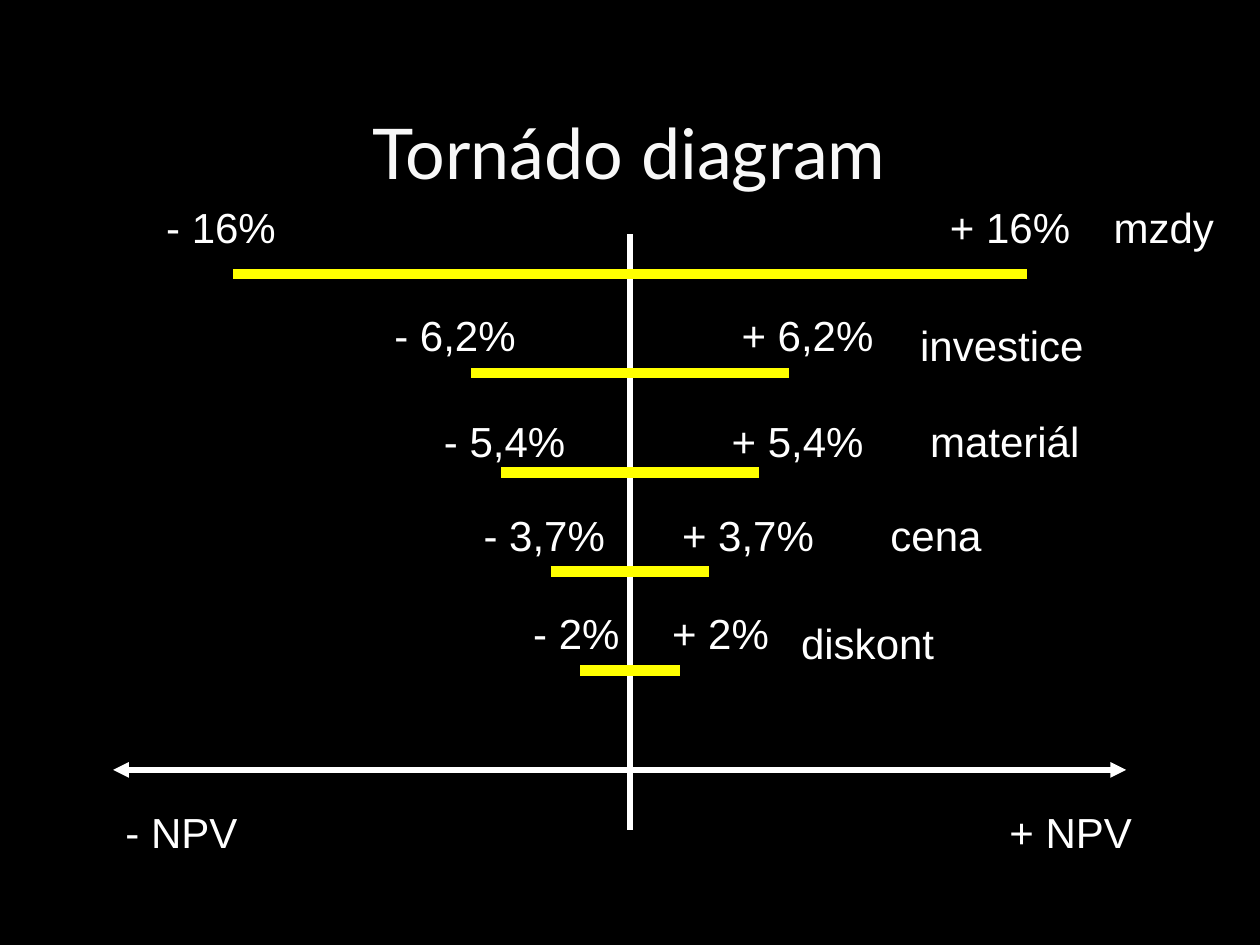
from dataclasses import dataclass

from lxml import etree
from pptx import Presentation
from pptx.dml.color import RGBColor
from pptx.enum.shapes import MSO_CONNECTOR
from pptx.enum.text import MSO_ANCHOR, MSO_AUTO_SIZE, PP_ALIGN
from pptx.oxml.ns import qn
from pptx.util import Inches, Pt

STRAIGHT = MSO_CONNECTOR.STRAIGHT
MIDDLE = MSO_ANCHOR.MIDDLE
GROW = MSO_AUTO_SIZE.SHAPE_TO_FIT_TEXT
CENTER = PP_ALIGN.CENTER


@dataclass(frozen=True)
class Theme:
    background: RGBColor = RGBColor(0x00, 0x00, 0x00)
    title: RGBColor = RGBColor(0xF8, 0xF8, 0xF8)
    text: RGBColor = RGBColor(0xFF, 0xFF, 0xFF)
    bar: RGBColor = RGBColor(0xFF, 0xFF, 0x00)
    title_font: str = "Lato"
    text_font: str = "Arial"
    title_size: Pt = Pt(40)
    text_size: Pt = Pt(24)
    axis_width: Pt = Pt(3)
    bar_width: Pt = Pt(6)


theme = Theme()
presentation = Presentation()
presentation.slide_width = Inches(10)
presentation.slide_height = Inches(7.5)
slide = presentation.slides.add_slide(presentation.slide_layouts[5])
slide.background.fill.solid()
slide.background.fill.fore_color.rgb = theme.background

# Square grid: 127 units across the slide, all positions below are in units
unit = presentation.slide_width / 127
center = 63.5
first_bar, bar_step = 27.6, 10
axis_left, axis_right, axis_y = 11.4, 113.5, 77.6
value_width, name_width, label_height = 16, 27, 6.35


def add_line(start_x, start_y, end_x, end_y, color, width):
    line = slide.shapes.add_connector(
        STRAIGHT, *(round(n * unit) for n in (start_x, start_y, end_x, end_y)))
    line.line.color.rgb = color
    line.line.width = width
    etree.SubElement(line._element.spPr, qn("a:effectLst"))
    return line


def add_label(text, left, top, width):
    box = slide.shapes.add_textbox(
        *(round(n * unit) for n in (left, top, width, label_height)))
    frame = box.text_frame
    frame.word_wrap = True
    frame.auto_size = GROW
    paragraph = frame.paragraphs[0]
    paragraph.text = text
    paragraph.font.name = theme.text_font
    paragraph.font.size = theme.text_size
    paragraph.font.color.rgb = theme.text


title = slide.shapes.title
title.left, title.top, title.width, title.height = (
    round(n * unit) for n in (9.5, 8.5, 107.8, 13.5))
title.text_frame.vertical_anchor = MIDDLE
heading = title.text_frame.paragraphs[0]
heading.text = "Tornádo diagram"
heading.alignment = CENTER
heading.font.name = theme.title_font
heading.font.size = theme.title_size
heading.font.color.rgb = theme.title

add_line(center, 23.6, center, 83.7, theme.text, theme.axis_width)
npv_axis = add_line(axis_left, axis_y, axis_right, axis_y, theme.text, theme.axis_width)
axis_outline = npv_axis.line._get_or_add_ln()
for end in ("a:headEnd", "a:tailEnd"):
    etree.SubElement(axis_outline, qn(end), type="triangle")

# name, change, half bar, minus left, plus left, value top, name left, name top
factors = [
    ("mzdy", "16%", 40, 15.5, 94.5, 19.7, 111, 19.7),
    ("investice", "6,2%", 16, 38.5, 73.5, 30.6, 91.5, 31.6),
    ("materiál", "5,4%", 13, 43.5, 72.5, 41.3, 92.5, 41.3),
    ("cena", "3,7%", 8, 47.5, 67.5, 50.7, 88.5, 50.7),
    ("diskont", "2%", 5, 52.5, 66.5, 60.6, 79.5, 61.6),
]
for index, factor in enumerate(factors):
    half = factor[2]
    bar_y = first_bar + index * bar_step
    add_line(center - half, bar_y, center + half, bar_y, theme.bar, theme.bar_width)

for name, change, _, minus_left, plus_left, value_top, name_left, name_top in factors:
    add_label(f"- {change}", minus_left, value_top, value_width)
    add_label(f"+ {change}", plus_left, value_top, value_width)
    add_label(name, name_left, name_top, value_width if name == "mzdy" else name_width)

for text, left in (("- NPV", axis_left), ("+ NPV", 100.5)):
    add_label(text, left, 80.7, value_width)

presentation.save("out.pptx")
